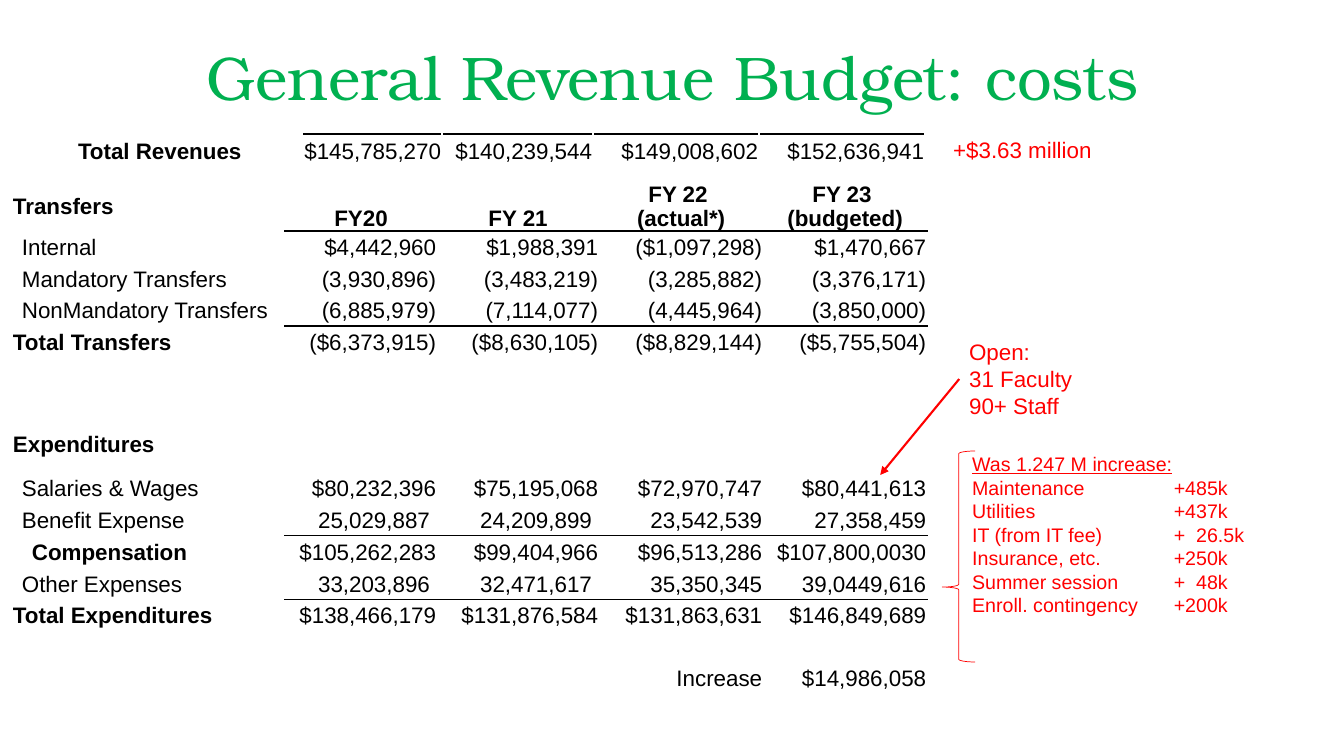
from lxml import etree
from pptx import Presentation
from pptx import util as u
from pptx.dml.color import RGBColor
from pptx.enum import shapes, text
from pptx.oxml import ns

PX_PER_INCH = 100.8
BLACK = RGBColor(0, 0, 0)
WHITE = RGBColor(255, 255, 255)
RED = RGBColor(255, 0, 0)
GREEN = RGBColor(0, 0xB0, 0x50)

REVENUES = [("Total Revenues", "$145,785,270", "$140,239,544", "$149,008,602", "$152,636,941")]
BUDGET = [
    ("Transfers", "FY20", "FY 21", "FY 22 \n(actual*)", "FY 23 \n(budgeted)"),
    ("Internal", "$4,442,960", "$1,988,391", "($1,097,298)", "$1,470,667"),
    ("Mandatory Transfers", "(3,930,896)", "(3,483,219)", "(3,285,882)", "(3,376,171)"),
    ("NonMandatory Transfers", "(6,885,979)", "(7,114,077)", "(4,445,964)", "(3,850,000)"),
    ("Total Transfers", "($6,373,915)", "($8,630,105)", "($8,829,144)", "($5,755,504)"),
    (),
    ("Expenditures",),
    ("Salaries & Wages", "$80,232,396", "$75,195,068", "$72,970,747", "$80,441,613"),
    ("Benefit Expense", "25,029,887 ", "24,209,899 ", "23,542,539", "27,358,459"),
    ("Compensation", "$105,262,283", "$99,404,966", "$96,513,286", "$107,800,0030"),
    ("Other Expenses", "33,203,896 ", "32,471,617 ", "35,350,345", "39,0449,616"),
    ("Total Expenditures", "$138,466,179", "$131,876,584", "$131,863,631", "$146,849,689"),
    (),
    ("", "", "", "Increase", "$14,986,058"),
]
BUDGET_HEIGHTS = [50, 32, 32, 31, 32, 59, 55, 32, 32, 32, 32, 31, 32, 32]
RULED_ROWS = (0, 3, 8, 10)
BOLD_LABELS = {"Total Revenues", "Transfers", "Total Transfers", "Expenditures",
               "Compensation", "Total Expenditures"}
INDENTS = {"Internal": 10, "Mandatory Transfers": 10, "NonMandatory Transfers": 10,
           "Salaries & Wages": 10, "Benefit Expense": 10, "Other Expenses": 10,
           "Compensation": 20}
INCREASES = ["Was 1.247 M increase:", "Maintenance \t+485k", "Utilities\t\t+437k",
             "IT (from IT fee)\t+  26.5k", "Insurance, etc.\t+250k",
             "Summer session\t+  48k", "Enroll. contingency\t+200k"]


def px(n):
    return u.Emu(round(n * 914400 / PX_PER_INCH))


def box(*lengths):
    return [px(n) for n in lengths]


def set_font(p, size, color, name="Arial", bold=False):
    f = p.font
    f.size, f.name, f.bold = u.Pt(size), name, bold
    f.color.rgb = color


def add_title(s, words):
    sp = s.shapes.title
    sp.left, sp.top, sp.width, sp.height = box(93, 8, 1159, 146)
    tf = sp.text_frame
    tf.text = words
    tf.vertical_anchor = text.MSO_ANCHOR.MIDDLE
    p = tf.paragraphs[0]
    p.alignment, p.line_spacing = text.PP_ALIGN.CENTER, 0.9
    set_font(p, 44, GREEN, "TeX Gyre Bonum")


def rule_cell(cell, side):
    """Draw a 1 pt black border on one side: lnT or lnB."""
    ln = etree.Element(ns.qn("a:" + side), w=str(u.Pt(1)))
    fill = etree.SubElement(ln, ns.qn("a:solidFill"))
    etree.SubElement(fill, ns.qn("a:srgbClr"), val=str(BLACK))
    cell._tc.get_or_add_tcPr().insert(0, ln)


def fill_cell(cell, words, is_label, is_header):
    cell.fill.solid()
    cell.fill.fore_color.rgb = WHITE
    cell.margin_left = px(INDENTS.get(words, 1))
    cell.margin_right = cell.margin_top = px(1)
    cell.margin_bottom = 0
    cell.vertical_anchor = text.MSO_ANCHOR.MIDDLE
    cell.text = words
    for p in cell.text_frame.paragraphs:
        set_font(p, 16, BLACK, bold=is_header or words in BOLD_LABELS)
        if is_label:
            continue
        p.alignment = text.PP_ALIGN.RIGHT
        if is_header:
            cell.vertical_anchor = text.MSO_ANCHOR.BOTTOM
            p.alignment, p.line_spacing = text.PP_ALIGN.CENTER, u.Pt(17)


def add_budget_table(s, left, top, widths, heights, rows, header=False):
    frame = s.shapes.add_table(len(rows), len(widths),
                               *box(left, top, sum(widths), sum(heights)))
    table = frame.table
    table.first_row = table.horz_banding = False
    for column, width in zip(table.columns, widths):
        column.width = px(width)
    for r, (row, height) in enumerate(zip(rows, heights)):
        table.rows[r].height = px(height)
        for c in range(len(widths)):
            words = row[c] if c < len(row) else ""
            fill_cell(table.cell(r, c), words, c == 0, header and r == 0)
    return table


def rule_row(table, row, side):
    for c in range(1, len(table.columns)):
        rule_cell(table.cell(row, c), side)


def add_note(s, place, lines, size):
    sp = s.shapes.add_textbox(*box(*place))
    tf = sp.text_frame
    tf.text = "\n".join(lines)
    tf.word_wrap = True
    tf.auto_size = text.MSO_AUTO_SIZE.SHAPE_TO_FIT_TEXT
    for p in tf.paragraphs:
        set_font(p, size, RED)
    return sp


def set_inch_tabs(p):
    tabs = etree.Element(ns.qn("a:tabLst"))
    for inches in (1, 2):
        etree.SubElement(tabs, ns.qn("a:tab"), pos=str(u.Inches(inches)), algn="l")
    p._p.get_or_add_pPr().insert(0, tabs)


def add_brace(s, place):
    sp = s.shapes.add_shape(shapes.MSO_SHAPE.LEFT_BRACE, *box(*place))
    sp.adjustments[0], sp.adjustments[1] = 0.083, 0.645
    sp.shadow.inherit = False
    sp.fill.background()
    sp.line.color.rgb, sp.line.width = RED, u.Pt(0.5)


def add_arrow(s, source, x, y):
    """Draw an arrow from the left side of source to a point."""
    line = s.shapes.add_connector(shapes.MSO_CONNECTOR.STRAIGHT,
                                  source.left, source.top, px(x), px(y))
    line.begin_connect(source, 1)
    line.line.color.rgb, line.line.width = RED, u.Pt(1.5)
    etree.SubElement(line.line._get_or_add_ln(), ns.qn("a:tailEnd"), type="triangle")
    etree.SubElement(line._element.spPr, ns.qn("a:effectLst"))


def main():
    prs = Presentation()
    prs.slide_width, prs.slide_height = u.Inches(13.33), u.Inches(7.5)
    s = prs.slides.add_slide(prs.slide_layouts[5])

    budget = add_budget_table(s, 12, 181, [273, 152, 162, 164, 164],
                              BUDGET_HEIGHTS, BUDGET, header=True)
    for row in RULED_ROWS:
        rule_row(budget, row, "lnB")
        rule_row(budget, row + 1, "lnT")
    add_title(s, "General Revenue Budget: costs")

    increases = add_note(s, (962, 447, 327, 224), INCREASES, 14)
    for p in increases.text_frame.paragraphs:
        set_inch_tabs(p)
    increases.text_frame.paragraphs[0].font.underline = True

    revenues = add_budget_table(s, 77, 134, [225, 140, 151, 166, 166], [34], REVENUES)
    rule_row(revenues, 0, "lnT")
    add_note(s, (943, 131, 197, 37), ["+$3.63 million"], 16)
    add_brace(s, (942, 451, 33, 211))
    openings = add_note(s, (959, 333, 240, 92), ["Open:", "31 Faculty", "90+ Staff"], 16)
    add_arrow(s, openings, 880, 475)
    prs.save("out.pptx")


if __name__ == "__main__":
    main()
